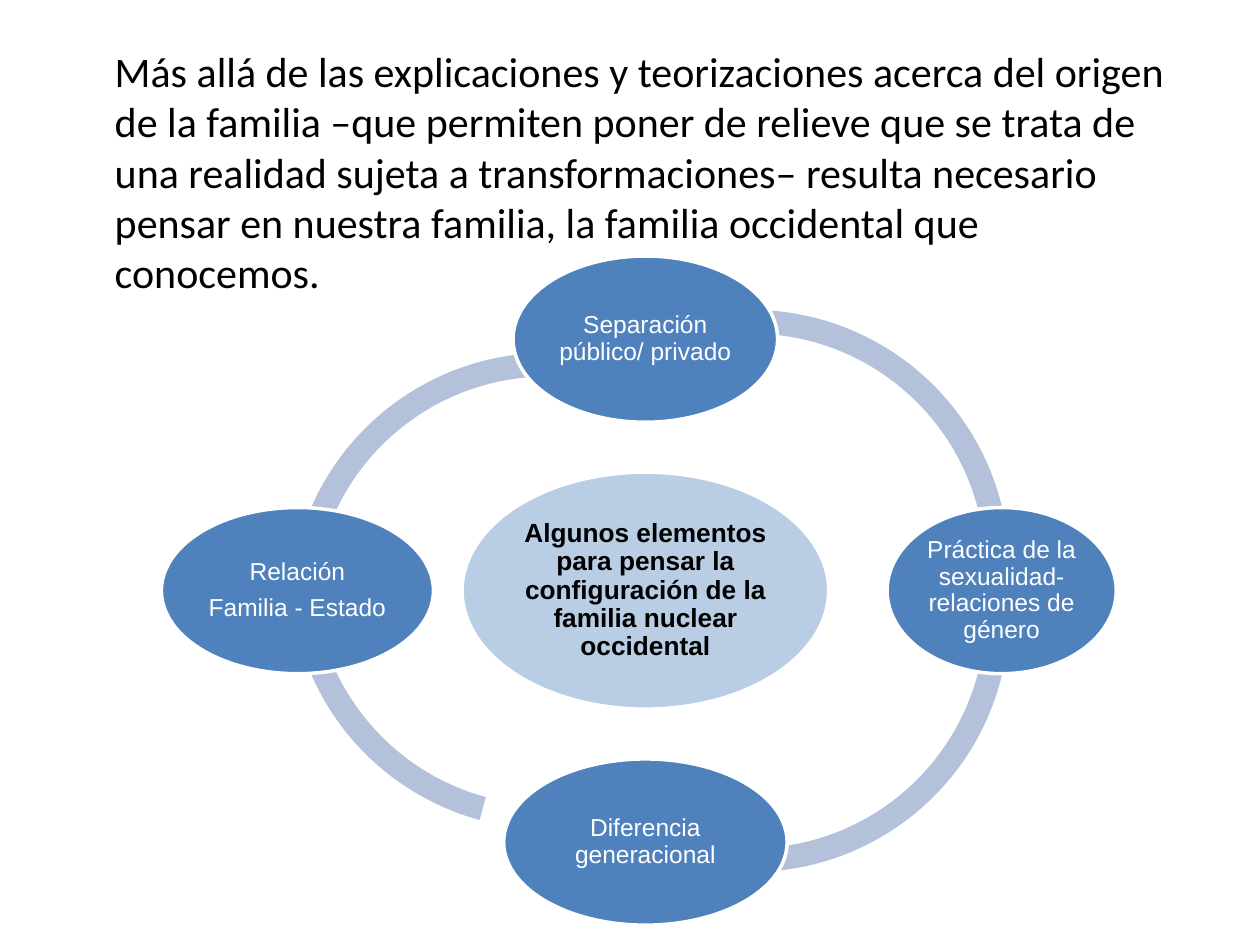
from pptx import Presentation
from pptx.util import Pt
from pptx.dml.color import RGBColor
from pptx.enum.shapes import MSO_SHAPE
from pptx.enum.text import MSO_ANCHOR, PP_ALIGN

COLORS = {"ring": "B3C1DB", "center": "B9CDE5", "node": "4F81BD",
          "white": "FFFFFF", "black": "000000"}


def rgb(name):
    return RGBColor.from_string(COLORS[name])


def add_ellipse(cx, cy, w, h, lines, fill, color, size, bold=False):
    """Draw an outlined ellipse centred on (cx, cy) with one paragraph per line."""
    s = shapes.add_shape(MSO_SHAPE.OVAL, Pt(cx - w / 2), Pt(cy - h / 2), Pt(w), Pt(h))
    s.shadow.inherit = False
    s.fill.solid()
    s.fill.fore_color.rgb = rgb(fill)
    s.line.color.rgb = rgb("white")
    s.line.width = Pt(2)
    tf = s.text_frame
    tf.word_wrap = True
    tf.vertical_anchor = MSO_ANCHOR.MIDDLE
    tf.margin_left = tf.margin_right = tf.margin_top = tf.margin_bottom = Pt(1.4)
    tf.text = "\n".join(lines)
    for p in tf.paragraphs:
        p.alignment = PP_ALIGN.CENTER
        p.line_spacing = 0.9
        p.space_after = Pt(5)
        p.font.name = "Arial"
        p.font.size = Pt(size)
        p.font.bold = bold
        p.font.color.rgb = rgb(color)


prs = Presentation()
prs.slide_width, prs.slide_height = Pt(720), Pt(540)
shapes = prs.slides.add_slide(prs.slide_layouts[6]).shapes

# Introductory paragraph
tf = shapes.add_textbox(Pt(58.5), Pt(22.3), Pt(628), Pt(500)).text_frame
tf.word_wrap = True
p = tf.paragraphs[0]
p.text = ("Más allá de las explicaciones y teorizaciones acerca del origen de la familia "
          "–que permiten poner de relieve que se trata de una realidad sujeta a "
          "transformaciones– resulta necesario pensar en nuestra familia, la familia "
          "occidental que conocemos.")
p.font.name = "Calibri"
p.font.size = Pt(24)
p.font.color.rgb = rgb("black")

# Ring: left, top, start and end angle in degrees, clockwise from the right
RING_SIZE = 294.5
ARCS = [(165.6, 179.3, 105.27, 175.73),
        (165.6, 201.6, 180 + 4.31, 270 + 15),
        (282.2, 203.8, 4, 105),
        (282.2, 177.1, 255, 356)]
# The left arcs mirror each other about the horizontal axis
for left, top, start, end in ARCS:
    s = shapes.add_shape(MSO_SHAPE.BLOCK_ARC, Pt(left), Pt(top), Pt(RING_SIZE), Pt(RING_SIZE))
    s.shadow.inherit = False
    s.fill.solid()
    s.fill.fore_color.rgb = rgb("ring")
    s.line.fill.background()
    # Angles are stored in 60000ths of a degree, adjustments in 100000ths
    s.adjustments[0], s.adjustments[1], s.adjustments[2] = start * 0.6, end * 0.6, 0.046

# Central idea and the four elements around it
CX, CY, NODE_H, RISE = 368.8, 337.5, 95, 143.7
add_ellipse(CX, CY, 209.5, 135.4,
            ["Algunos elementos para pensar la configuración de la familia nuclear occidental"],
            "center", "black", 15, bold=True)
NODES = [(CX, CY - RISE, 151.2, ["Separación público/ privado"]),
         (572.4, CY, 131, ["Práctica de la sexualidad- relaciones de género"]),
         (CX, CY + RISE, 162, ["Diferencia generacional"]),
         (170, CY, 155.5, ["Relación", "Familia - Estado"])]
for cx, cy, w, lines in NODES:
    add_ellipse(cx, cy, w, NODE_H, lines, "node", "white", 14)

prs.save("out.pptx")
